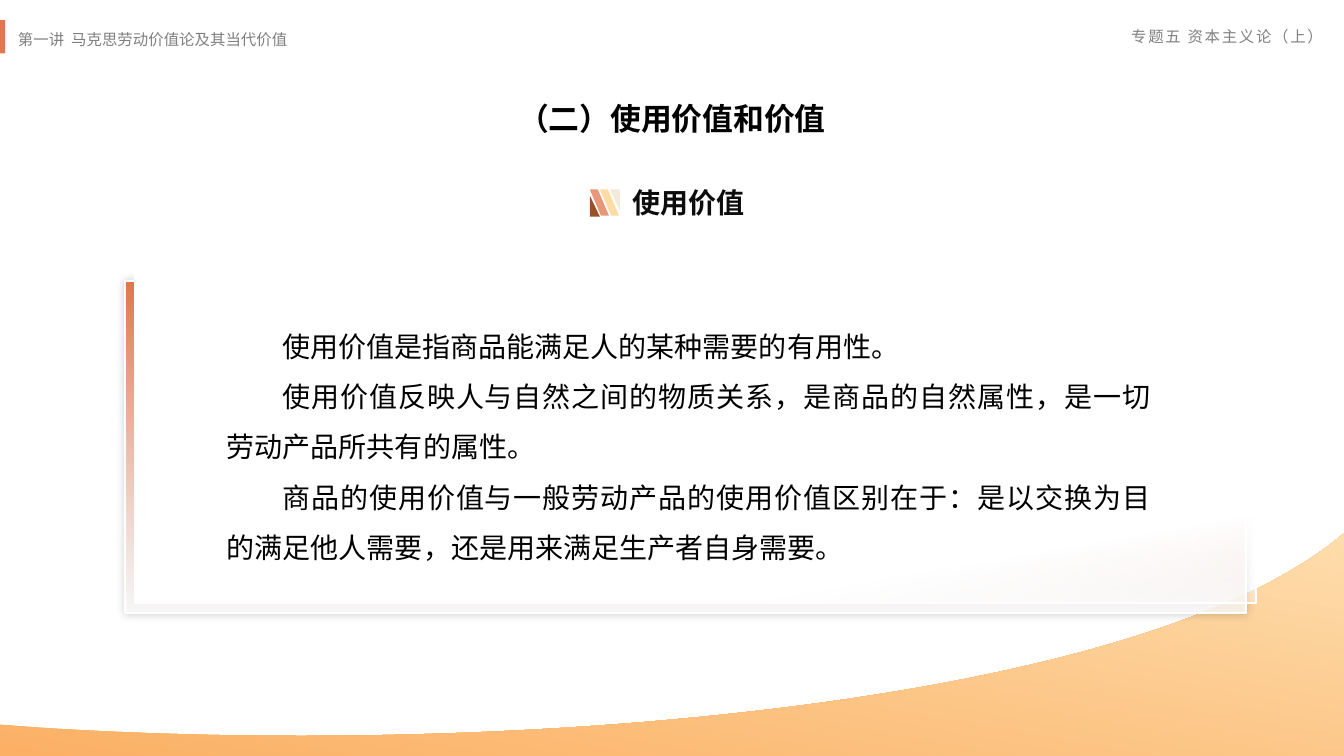
from lxml import etree
from pptx import Presentation
from pptx.dml.color import RGBColor
from pptx.enum.shapes import MSO_SHAPE
from pptx.enum.text import MSO_AUTO_SIZE, PP_ALIGN
from pptx.oxml.ns import qn
from pptx.util import Inches, Pt

RECTANGLE = MSO_SHAPE.RECTANGLE
PARALLELOGRAM = MSO_SHAPE.PARALLELOGRAM
TRIANGLE = MSO_SHAPE.RIGHT_TRIANGLE
GROW = MSO_AUTO_SIZE.SHAPE_TO_FIT_TEXT
CENTER, RIGHT, JUSTIFY = PP_ALIGN.CENTER, PP_ALIGN.RIGHT, PP_ALIGN.JUSTIFY

FONT = "Noto Sans CJK SC"
WHITE = RGBColor(0xFF, 0xFF, 0xFF)
BLACK = RGBColor(0, 0, 0)
INK = RGBColor(0x0D, 0x0D, 0x0D)
GRAY = RGBColor(0x80, 0x80, 0x80)
ORANGE = RGBColor(0xE1, 0x77, 0x51)
APRICOT = RGBColor(0xFB, 0xB0, 0x65)
CREAM = RGBColor(0xFE, 0xDD, 0xAC)
YELLOW = RGBColor(0xFE, 0xDC, 0xA3)
IVORY = RGBColor(0xF2, 0xEB, 0xD9)
SALMON = RGBColor(0xE8, 0x97, 0x79)
BROWN = RGBColor(0x98, 0x51, 0x25)

DEFINITIONS = [
    "使用价值是指商品能满足人的某种需要的有用性。",
    "使用价值反映人与自然之间的物质关系，是商品的自然属性，是一切劳动产品所共有的属性。",
    "商品的使用价值与一般劳动产品的使用价值区别在于：是以交换为目的满足他人需要，还是用来满足生产者自身需要。",
]


def add_color(parent, color, alpha):
    node = etree.SubElement(parent, qn("a:srgbClr"), val=str(color))
    if alpha < 100:
        etree.SubElement(node, qn("a:alpha"), val=str(alpha * 1000))


def set_gradient(shape, stops, angle):
    shape.fill.background()
    empty = shape._element.spPr.find(qn("a:noFill"))
    gradient = etree.Element(qn("a:gradFill"), rotWithShape="1")
    stop_list = etree.SubElement(gradient, qn("a:gsLst"))
    for place, color, alpha in stops:
        stop = etree.SubElement(stop_list, qn("a:gs"), pos=str(place * 1000))
        add_color(stop, color, alpha)
    etree.SubElement(gradient, qn("a:lin"), ang=str(angle * 60000), scaled="0")
    empty.getparent().replace(empty, gradient)


def add_soft_shadow(shape):
    effects = shape._element.spPr.find(qn("a:effectLst"))
    shadow = etree.SubElement(effects, qn("a:outerShdw"), blurRad=str(Pt(6)),
                              dist="0", dir=str(315 * 60000), algn="ctr", rotWithShape="0")
    add_color(shadow, BLACK, 20)


def add_shape(shapes, kind, box, color=None, flip=()):
    shape = shapes.add_shape(kind, *map(Inches, box))
    shape.shadow.inherit = False
    shape.line.fill.background()
    if color is not None:
        shape.fill.solid()
        shape.fill.fore_color.rgb = color
    for side in flip:
        shape._element.spPr.get_or_add_xfrm().set(side, "1")
    return shape


def add_text(shapes, box, lines, size, color, align, bold=False,
             line_spacing=None, indent=0, tracking=0):
    frame = shapes.add_textbox(*map(Inches, box)).text_frame
    frame.word_wrap = True
    frame.auto_size = GROW
    for index, line in enumerate(lines):
        para = frame.paragraphs[0] if index == 0 else frame.add_paragraph()
        para.alignment = align
        if line_spacing:
            para.line_spacing = line_spacing
        if indent:
            para._p.get_or_add_pPr().set("indent", str(Inches(indent)))
        span = para.add_run()
        span.text = line
        span.font.size = Pt(size)
        span.font.bold = bold
        span.font.color.rgb = color
        span.font.name = FONT
        properties = span._r.get_or_add_rPr()
        etree.SubElement(properties, qn("a:ea"), typeface=FONT)
        if tracking:
            properties.set("spc", str(int(tracking * 100)))


def draw_header(page, box):
    left, top, width, height = box
    add_text(page.shapes, (left + width - 3.13, top + 0.02, 3.02, 0.29),
             ["专题五 资本主义论（上）"], 11, GRAY, RIGHT, tracking=1.2)
    add_text(page.shapes, (left + 0.08, top + 0.01, 7.8, 0.3),
             ["第一讲  马克思劳动价值论及其当代价值"], 11, GRAY, JUSTIFY, line_spacing=1.2)
    add_shape(page.shapes, RECTANGLE, (left, top, 0.05, height), ORANGE)


def draw_wave(page, box):
    left, top, width, height = box
    controls = [(13.32, 0.01), (11.32, 1.7), (5.12, 2.23), (0.41, 1.93)]
    steps = 80
    curve = []
    for step in range(steps + 1):
        t = step / steps
        weights = ((1 - t) ** 3, 3 * t * (1 - t) ** 2, 3 * t ** 2 * (1 - t), t ** 3)
        curve.append(tuple(sum(w * point[axis] for w, point in zip(weights, controls))
                           for axis in (0, 1)))
    outline = [(width, 0), *curve, (0, 1.9), (0, height), (width, height)]
    points = [(Inches(left + x), Inches(top + y)) for x, y in outline]
    builder = page.shapes.build_freeform(*points[0])
    builder.add_line_segments(points[1:], close=True)
    wave = builder.convert_to_shape()
    wave.shadow.inherit = False
    wave.line.fill.background()
    set_gradient(wave, [(0, APRICOT, 100), (100, CREAM, 100)], 280)


def draw_definition_card(page, box):
    left, top, width, height = box
    offset = 0.1
    card = page.shapes.add_group_shape().shapes
    back = add_shape(card, RECTANGLE, (left, top + offset, width, height))
    set_gradient(back, [(0, ORANGE, 100), (100, WHITE, 80)], 90)
    add_soft_shadow(back)
    front = add_shape(card, RECTANGLE, (left + offset, top, width, height))
    set_gradient(front, [(83, WHITE, 100), (100, WHITE, 32)], 80)
    for panel in (back, front):
        panel.line.color.rgb = WHITE
        panel.line.width = Pt(1.5)
    add_text(page.shapes, (left + 0.91, top + 0.36, 9.36, 2.63), DEFINITIONS,
             20, BLACK, JUSTIFY, line_spacing=1.5, indent=0.55)


def draw_subtitle(page, box):
    left, top, width, height = box
    group = page.shapes.add_group_shape().shapes
    add_text(group, (left + 0.06, top, width - 0.06, height),
             ["使用价值"], 20, INK, CENTER, bold=True)
    stripe = 0.1
    icon_top = top + 0.09
    pieces = [
        (PARALLELOGRAM, 1, 0, 0.19, 0.26, YELLOW, ("flipH",)),
        (TRIANGLE, 2, 0, 0.1, 0.21, IVORY, ("flipH", "flipV")),
        (PARALLELOGRAM, 0, 0, 0.19, 0.26, SALMON, ("flipH",)),
        (TRIANGLE, 0, 0.06, 0.1, 0.21, BROWN, ()),
    ]
    for kind, column, drop, wide, tall, color, flip in pieces:
        piece = add_shape(group, kind, (left + column * stripe, icon_top + drop, wide, tall),
                          color, flip)
        if kind == PARALLELOGRAM:
            piece.adjustments[0] = 0.585


def main():
    deck = Presentation()
    deck.slide_width, deck.slide_height = Inches(13.33), Inches(7.5)
    page = deck.slides.add_slide(deck.slide_layouts[6])
    draw_header(page, (0, 0.2, 13.33, 0.33))
    draw_wave(page, (0, 5.29, 13.33, 2.21))
    draw_definition_card(page, (1.24, 2.69, 11.12, 3.29))
    add_text(page.shapes, (3.8, 0.94, 5.73, 0.47), ["（二）使用价值和价值"],
             22, BLACK, CENTER, bold=True)
    draw_subtitle(page, (5.85, 1.79, 1.9, 0.44))
    deck.save("out.pptx")


if __name__ == "__main__":
    main()
